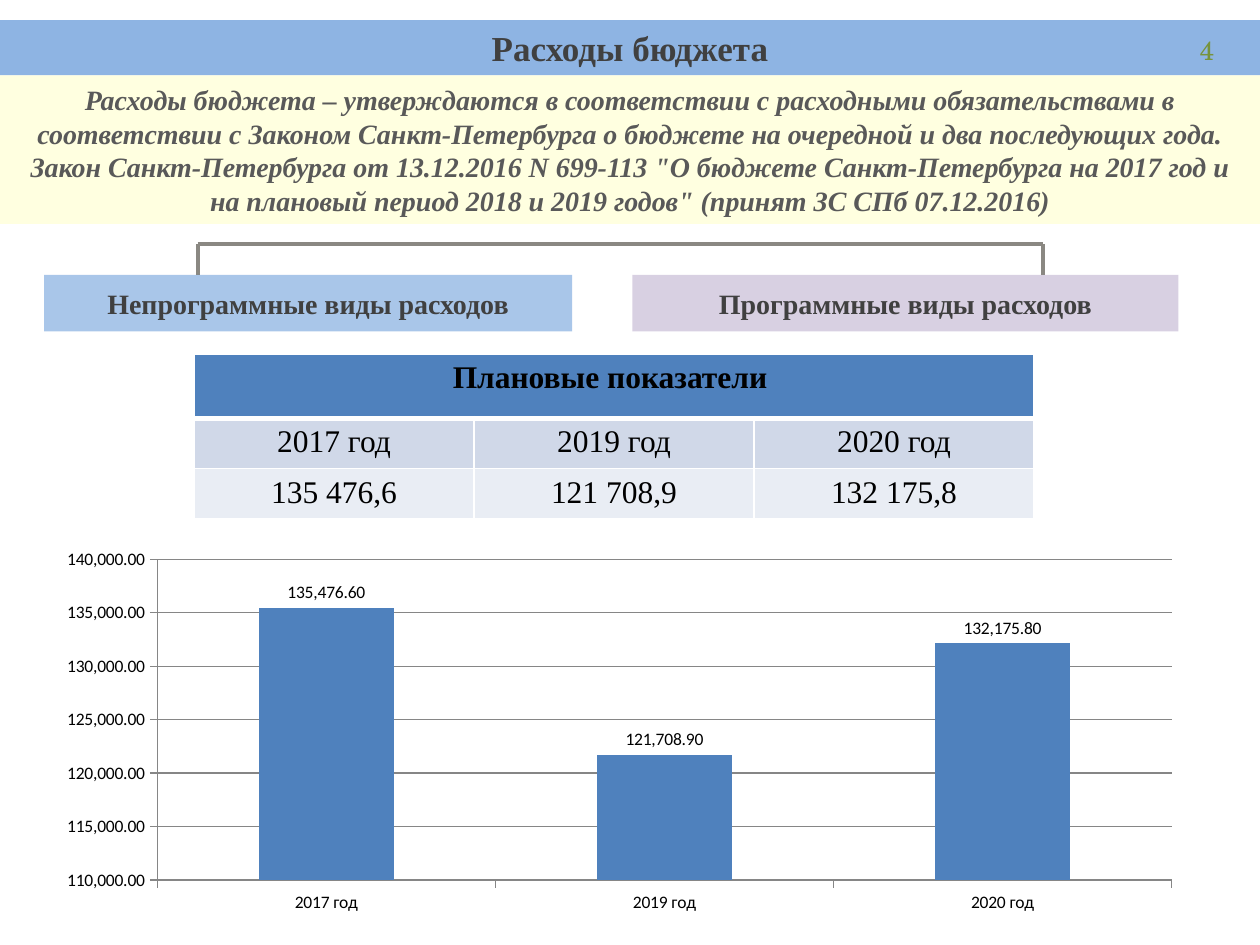
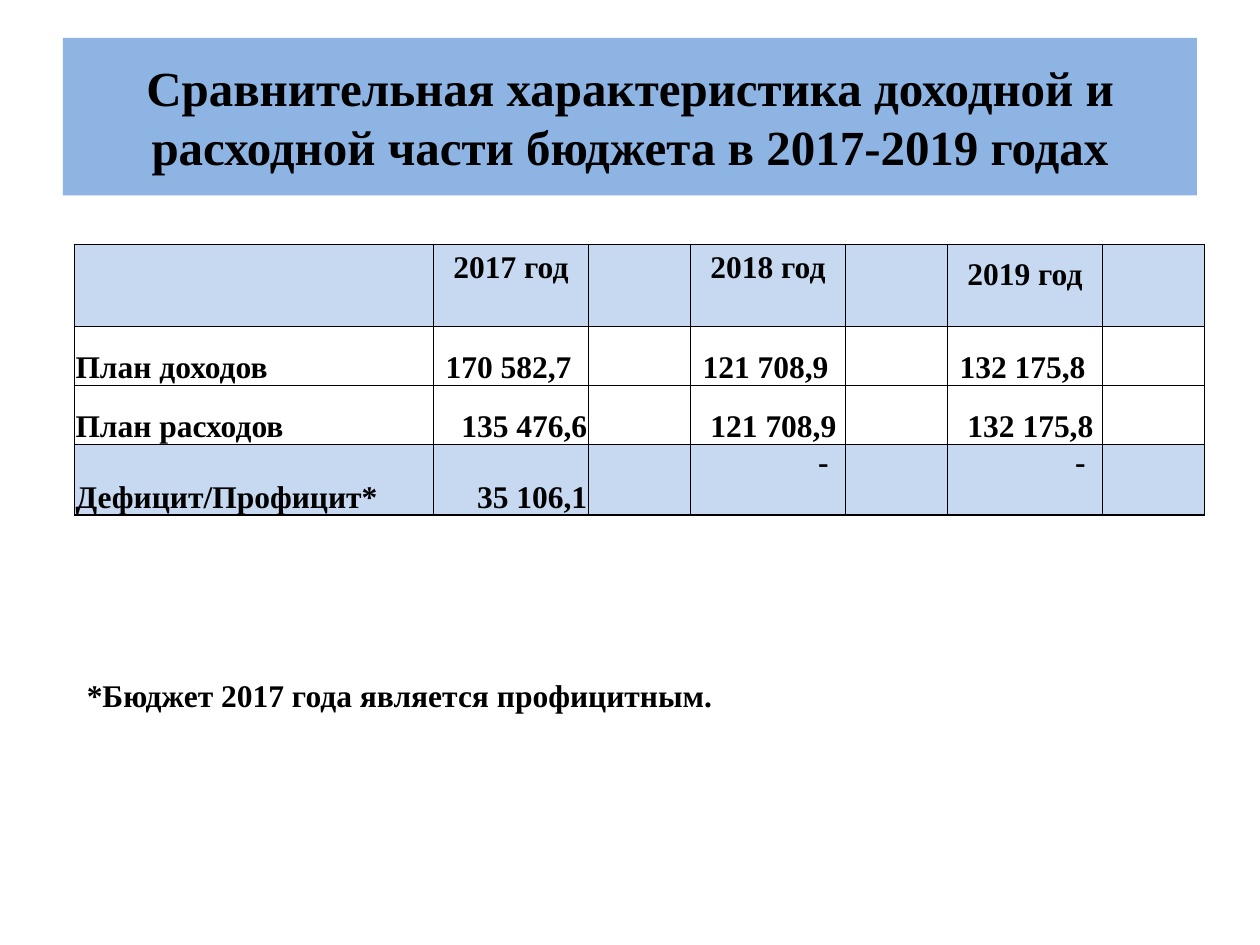
from lxml.etree import SubElement
from pptx import Presentation
from pptx.chart.data import CategoryChartData
from pptx.dml.color import RGBColor
from pptx.enum.chart import XL_CHART_TYPE as CHART, XL_LABEL_POSITION as LABEL, XL_TICK_MARK as TICK
from pptx.enum.shapes import MSO_CONNECTOR as LINE, MSO_SHAPE as SHAPE
from pptx.enum.text import MSO_ANCHOR as ANCHOR, PP_ALIGN as ALIGN
from pptx.oxml import parse_xml
from pptx.oxml.ns import nsdecls, qn
from pptx.util import Pt

BAND, GREY, TEXT, BLUE, PALE = "8EB4E3", "404040", "000000", "4F81BD", "C6D9F1"
SERIF = "Times New Roman"


def rgb(value):
    """Turn a hex string into a colour."""
    return RGBColor.from_string(value)


class Deck:
    """Presentation with a shared style and a current slide."""

    def __init__(self):
        """Start an empty 10 by 7.5 inch deck."""
        self.prs = Presentation()
        self.prs.slide_width, self.prs.slide_height = Pt(720), Pt(540)

    def slide(self):
        """Add a blank slide and make it current."""
        self.s = self.prs.slides.add_slide(self.prs.slide_layouts[6])

    def set_text(self, tf, text, size, color=TEXT, align=ALIGN.CENTER, bold=True, italic=False, font=SERIF):
        """Fill a text frame, one paragraph per line."""
        tf.text = text
        for p in tf.paragraphs:
            p.alignment = align
            f = p.font
            f.name, f.size, f.bold, f.italic = font, Pt(size), bold, italic
            f.color.rgb = rgb(color)

    def box(self, text, x, y, w, h, fill, size, color=TEXT, alpha=None, italic=False):
        """Draw a filled rectangle with centred text."""
        sp = self.s.shapes.add_shape(SHAPE.RECTANGLE, Pt(x), Pt(y), Pt(w), Pt(h))
        sp.shadow.inherit = False
        sp.line.fill.background()
        sp.fill.solid()
        sp.fill.fore_color.rgb = rgb(fill)
        if alpha:
            clr = sp._element.spPr.find(qn("a:solidFill")).find(qn("a:srgbClr"))
            SubElement(clr, qn("a:alpha")).set("val", str(alpha * 1000))
        tf = sp.text_frame
        tf.word_wrap, tf.vertical_anchor = True, ANCHOR.MIDDLE
        self.set_text(tf, text, size, color, italic=italic)

    def label(self, text, x, y, w, h, size, anchor=ANCHOR.TOP, **style):
        """Add a plain text box."""
        tf = self.s.shapes.add_textbox(Pt(x), Pt(y), Pt(w), Pt(h)).text_frame
        tf.word_wrap, tf.vertical_anchor = True, anchor
        self.set_text(tf, text, size, **style)

    def line(self, x1, y1, x2, y2):
        """Draw one bracket segment."""
        sp = self.s.shapes.add_connector(LINE.STRAIGHT, Pt(x1), Pt(y1), Pt(x2), Pt(y2))
        sp.line.color.rgb, sp.line.width = rgb("8A8882"), Pt(2.25)
        SubElement(sp._element.spPr, qn("a:effectLst"))

    def border(self, cell, color, top=1, bottom=1):
        """Outline a table cell."""
        tc_pr = cell._tc.get_or_add_tcPr()
        for i, (side, width) in enumerate(zip("LRTB", (1, 1, top, bottom))):
            tc_pr.insert(i, parse_xml(
                f'<a:ln{side} {nsdecls("a")} w="{Pt(width)}"><a:solidFill>'
                f'<a:srgbClr val="{color}"/></a:solidFill></a:ln{side}>'))

    def table(self, x, y, cols, heights, rows, fills, edge, head_line=1, bold_rows=()):
        """Add a table with one fill per row."""
        frame = self.s.shapes.add_table(len(rows), len(cols), Pt(x), Pt(y), Pt(sum(cols)), Pt(sum(heights)))
        t = frame.table
        for col, w in zip(t.columns, cols):
            col.width = Pt(w)
        for i, (row, texts) in enumerate(zip(t.rows, rows)):
            row.height = Pt(heights[i])
            for cell, text in zip(row.cells, texts):
                self.set_text(cell.text_frame, text, 18, bold=i in bold_rows)
                if fills[i]:
                    cell.fill.solid()
                    cell.fill.fore_color.rgb = rgb(fills[i])
                else:
                    cell.fill.background()
                self.border(cell, edge, head_line if i == 1 else 1, head_line if i == 0 else 1)
        return t

    def place(self, cell, align, anchor=ANCHOR.BOTTOM, right=0.7, top=0.7):
        """Set alignment and tight margins of a cell."""
        cell.text_frame.paragraphs[0].alignment = align
        cell.vertical_anchor = anchor
        cell.margin_left, cell.margin_right = Pt(0.7), Pt(right)
        cell.margin_top, cell.margin_bottom = Pt(top), Pt(0)

    def columns(self, x, y, w, h, cats, vals):
        """Add a column chart with value labels."""
        data = CategoryChartData(number_format="#,##0.00")
        data.categories = cats
        data.add_series("Series 1", vals)
        ch = self.s.shapes.add_chart(CHART.COLUMN_CLUSTERED, Pt(x), Pt(y), Pt(w), Pt(h), data).chart
        ch.has_legend = ch.has_title = False
        ch.font.size, ch.font.name, ch.font.color.rgb = Pt(10), "Calibri", rgb(TEXT)
        val = ch.value_axis
        val.minimum_scale, val.maximum_scale, val.major_unit = 110000, 140000, 5000
        val.has_major_gridlines = True
        val.tick_labels.number_format, val.tick_labels.number_format_is_linked = "#,##0.00", False
        for axis in (val, ch.category_axis):
            axis.major_tick_mark = TICK.OUTSIDE
        for part in (val, ch.category_axis, val.major_gridlines):
            part.format.line.color.rgb, part.format.line.width = rgb("868686"), Pt(0.75)
        plot = ch.plots[0]
        plot.gap_width, plot.vary_by_categories, plot.has_data_labels = 150, False, True
        labels = plot.data_labels
        labels.show_value, labels.position = True, LABEL.OUTSIDE_END
        labels.number_format, labels.number_format_is_linked = "#,##0.00", False
        fill = plot.series[0].format.fill
        fill.solid()
        fill.fore_color.rgb = rgb(BLUE)


def expenses(d):
    """Build the slide on budget expenses."""
    d.slide()
    left, right, top, bottom = 113, 596, 139.5, 157
    d.line(right, top, right, bottom)
    d.line(left, top, right, top)
    d.line(left, top, left, bottom)
    d.box("Расходы бюджета", 0, 11.5, 720, 31.5, BAND, 20, GREY)
    d.label("4", 660, 12.2, 41, 29, 15, ANCHOR.BOTTOM, color="77933C", align=ALIGN.RIGHT,
            bold=False, font="TeX Gyre Schola")
    d.box("Расходы бюджета – утверждаются в соответствии с расходными обязательствами в "
          "соответствии с Законом Санкт-Петербурга о бюджете на очередной и два последующих года.\n"
          "Закон Санкт-Петербурга от 13.12.2016 N 699-113 \"О бюджете Санкт-Петербурга на 2017 год и "
          "на плановый период 2018 и 2019 годов\" (принят ЗС СПб 07.12.2016)",
          0, 43, 720, 85, "FFFF00", 16, "595959", alpha=12, italic=True)
    d.box("Непрограммные виды расходов", 25.2, bottom, 301.7, 32.4, "558ED5", 16, GREY, alpha=50)
    d.box("Программные виды расходов", 361.4, bottom, 312, 32.4, "B3A2C7", 16, GREY, alpha=50)
    years = ["2017 год", "2019 год", "2020 год"]
    t = d.table(110.9, 202.3, [160] * 3, [36.7, 28.5, 28.5],
                [["Плановые показатели ", "", ""], years, ["135 476,6", "121 708,9", "132 175,8"]],
                [BLUE, "D0D8E8", "E9EDF4"], "FFFFFF", head_line=3, bold_rows=(0,))
    t.cell(0, 0).merge(t.cell(0, 2))
    d.columns(25.2, 309.6, 657.4, 216, years, [135476.6, 121708.9, 132175.8])


def comparison(d):
    """Build the slide comparing income and expenses."""
    d.slide()
    d.box("Сравнительная характеристика доходной и расходной части бюджета в 2017-2019 годах",
          36, 21.6, 648, 90, BAND, 28)
    rows = [["", "2017 год", "", "2018 год", "", "2019 год", ""],
            ["План доходов", "170 582,7", "", "121 708,9", "", "132 175,8", ""],
            ["План расходов", "135 476,6", "", "121 708,9", "", "132 175,8", ""],
            ["Дефицит/Профицит*", "35 106,1", "", "-", "", "-", ""]]
    t = d.table(42.5, 139.7, [205.2] + [88.6, 58.3] * 3, [46.9, 33.7, 33.7, 40.3],
                rows, [PALE, None, None, PALE], TEXT, bold_rows=range(4))
    d.place(t.cell(0, 5), ALIGN.CENTER, ANCHOR.TOP, top=7.4)
    gaps = {1: (9.7, 9.7, 9.7), 2: (0.7, 5.2, 5.2), 3: (0.7, 9.7, 9.7)}
    for r, rights in gaps.items():
        d.place(t.cell(r, 0), ALIGN.LEFT)
        for c, right in zip((1, 3, 5), rights):
            anchor = ANCHOR.TOP if rows[r][c] == "-" else ANCHOR.BOTTOM
            d.place(t.cell(r, c), ALIGN.RIGHT, anchor, right)
    d.label("*Бюджет 2017 года является профицитным.", 42.5, 383, 652, 29, 18, align=ALIGN.LEFT)


def main():
    """Build and save the deck."""
    d = Deck()
    expenses(d)
    comparison(d)
    d.prs.save("out.pptx")


if __name__ == "__main__":
    main()
